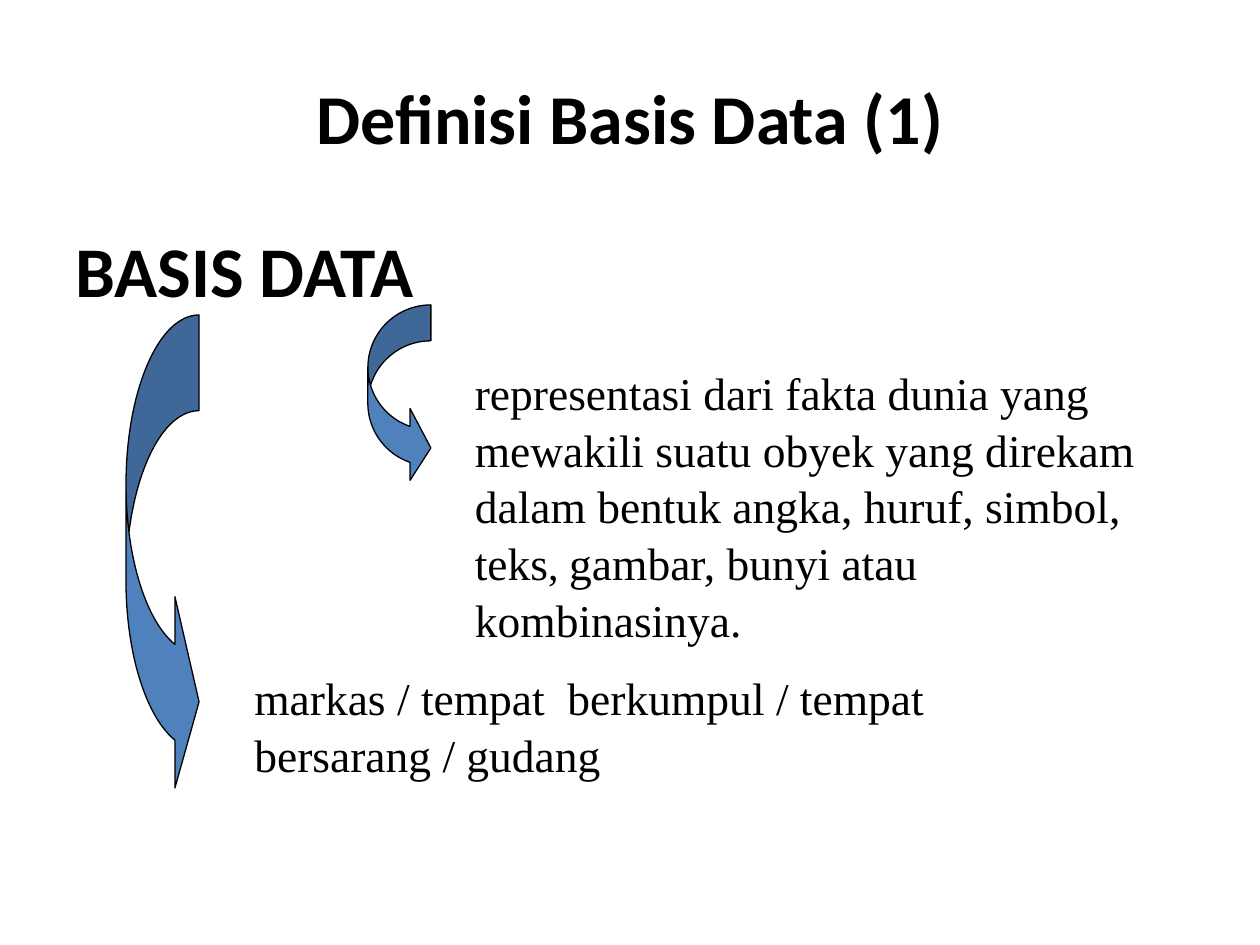
from dataclasses import dataclass

from pptx import Presentation
from pptx.dml.color import RGBColor
from pptx.enum.shapes import MSO_SHAPE
from pptx.enum.text import MSO_ANCHOR, PP_ALIGN
from pptx.util import Inches, Pt

CURVED_ARROW = MSO_SHAPE.CURVED_RIGHT_ARROW
LEFT, CENTER = PP_ALIGN.LEFT, PP_ALIGN.CENTER
TOP, MIDDLE = MSO_ANCHOR.TOP, MSO_ANCHOR.MIDDLE


@dataclass(frozen=True)
class Theme:
    """Colours, fonts and type sizes of the slide."""
    ink: RGBColor = RGBColor(0x00, 0x00, 0x00)
    arrow: RGBColor = RGBColor(0x4F, 0x81, 0xBD)
    heading_font: str = "Calibri"
    body_font: str = "Times New Roman"
    title_size: float = 40
    term_size: float = 40.7
    body_size: float = 26
    comma_size: float = 24
    outline: float = 0.75
    body_spacing: float = 1.04


THEME = Theme()


def add_text(slide, box, anchor=TOP):
    """Add a wrapping text box and return its first paragraph."""
    frame = slide.shapes.add_textbox(*map(Inches, box)).text_frame
    frame.word_wrap = True
    frame.vertical_anchor = anchor
    paragraph = frame.paragraphs[0]
    paragraph.font.color.rgb = THEME.ink
    return paragraph


def add_heading(slide, box, wording, size, align=LEFT, anchor=TOP):
    """Add a bold heading."""
    heading = add_text(slide, box, anchor)
    heading.text = wording
    heading.alignment = align
    heading.font.name = THEME.heading_font
    heading.font.size = Pt(size)
    heading.font.bold = True


def add_definition(slide, box, pieces):
    """Add a definition made of (wording, size) pieces."""
    definition = add_text(slide, box)
    definition.line_spacing = THEME.body_spacing
    definition.font.name = THEME.body_font
    for wording, size in pieces:
        run = definition.add_run()
        run.text = wording
        run.font.size = Pt(size)


def add_curved_arrow(slide, box, band, head):
    """Add a curved arrow with its band width and head length ratios."""
    arrow = slide.shapes.add_shape(CURVED_ARROW, *map(Inches, box))
    for index, ratio in enumerate((band, 2 * band, head)):
        arrow.adjustments[index] = ratio
    arrow.shadow.inherit = False
    arrow.fill.solid()
    arrow.fill.fore_color.rgb = THEME.arrow
    arrow.line.color.rgb = THEME.ink
    arrow.line.width = Pt(THEME.outline)


def main():
    """Build the slide and save it."""
    deck = Presentation()
    deck.slide_width, deck.slide_height = Inches(10), Inches(7.5)
    slide = deck.slides.add_slide(deck.slide_layouts[6])

    add_heading(slide, (0.5, 0.3, 9, 1.25), "Definisi Basis Data (1)",
                THEME.title_size, CENTER, MIDDLE)
    add_heading(slide, (0.5, 1.75, 4.5, 0.75), "BASIS DATA", THEME.term_size)

    add_curved_arrow(slide, (2.92, 2.42, 0.5, 1.42), 0.57, 0.33)
    add_definition(slide, (3.67, 2.83, 5.92, 1.83), [
        ("representasi dari fakta dunia yang mewakili suatu obyek yang "
         "direkam dalam bentuk angka, huruf, simbol, teks", THEME.body_size),
        (", ", THEME.comma_size),
        ("gambar, bunyi atau kombinasinya.", THEME.body_size),
    ])

    add_curved_arrow(slide, (1, 2.5, 0.58, 3.83), 1.31, 0.33)
    add_definition(slide, (1.92, 5.25, 5.92, 0.92), [
        ("markas / tempat  berkumpul / tempat bersarang / gudang",
         THEME.body_size),
    ])

    deck.save("out.pptx")


if __name__ == "__main__":
    main()
